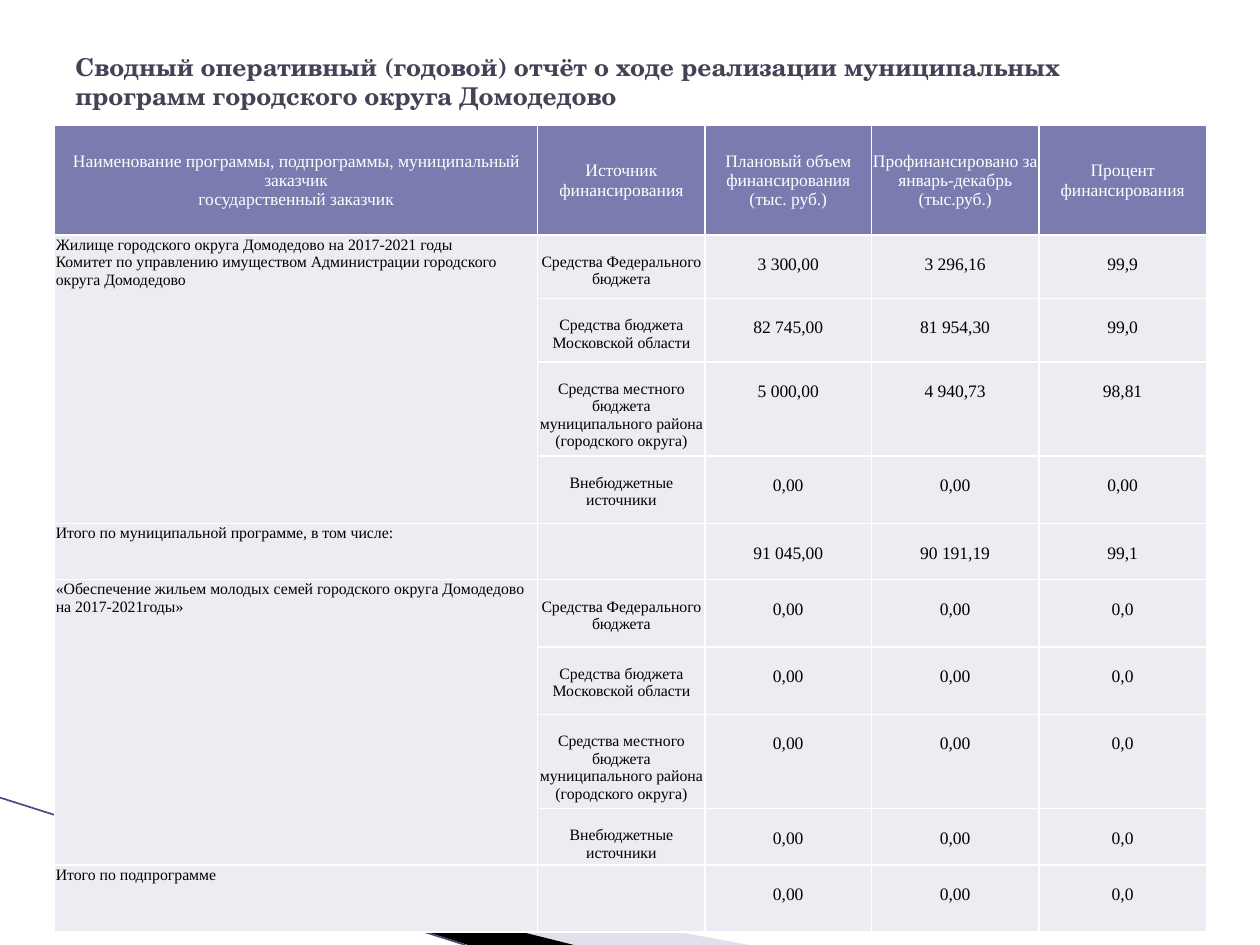
from dataclasses import dataclass

from lxml import etree
from pptx import Presentation, util as u
from pptx.dml.color import RGBColor
from pptx.enum import shapes, text
from pptx.oxml import ns

SERIF = "Times New Roman"
WHITE, BLACK, INK = "FFFFFF", "000000", "424456"
HEADER_FILL, BODY_FILL = "7A7BAE", "ECECF2"


@dataclass
class Wedge:
    points: list[tuple[float, float]]
    color: str
    alpha: int = 100


@dataclass
class CellStyle:
    size: float
    color: str = BLACK
    fill: str = BODY_FILL
    top: float = 0.7
    centered: bool = True
    middle: bool = False


@dataclass
class Program:
    name: str
    amounts: list[tuple[str, str, str]]
    total_name: str
    total: tuple[str, str, str]


HEADER = CellStyle(10, WHITE, HEADER_FILL, middle=True)
NAME = CellStyle(9, centered=False)
SOURCE = CellStyle(9, top=10.5)
AMOUNT = CellStyle(10, top=11.5)

WEDGES = [
    Wedge([(39.6, 468.5), (428, 540), (328.5, 540), (39.6, 468)], "B6B6D1", 40),
    Wedge([(38.2, 467.3), (328, 540), (267.5, 540), (38.9, 468)], BLACK),
]
COLUMNS = [276, 95.75, 95, 95.75, 95.75]
ROWS = [62.6, 36.3, 36.3, 36.3, 38.5, 26.6, 38.5, 38.5, 38.5, 26.6, 38.5]
HEADINGS = [
    "Наименование программы, подпрограммы, муниципальный заказчик\vгосударственный заказчик",
    "Источник финансирования",
    "Плановый объем финансирования (тыс. руб.)",
    "Профинансировано за январь-декабрь (тыс.руб.)",
    "Процент финансирования",
]
SOURCES = [
    "Средства Федерального бюджета",
    "Средства бюджета Московской области",
    "Средства местного бюджета муниципального района (городского округа)",
    "Внебюджетные источники",
]
NOTHING = ("0,00", "0,00", "0,0")
PROGRAMS = [
    Program(
        "Жилище городского округа Домодедово на 2017-2021 годы\v"
        "Комитет по управлению имуществом Администрации городского округа Домодедово",
        [
            ("3 300,00", "3 296,16", "99,9"),
            ("82 745,00", "81 954,30", "99,0"),
            ("5 000,00", "4 940,73", "98,81"),
            ("0,00", "0,00", "0,00"),
        ],
        "Итого по муниципальной программе, в том числе:",
        ("91 045,00", "90 191,19", "99,1"),
    ),
    Program(
        "«Обеспечение жильем молодых семей городского округа Домодедово на 2017-2021годы»",
        [NOTHING] * len(SOURCES),
        "Итого по подпрограмме",
        NOTHING,
    ),
]


def rgb(value: str) -> RGBColor:
    return RGBColor.from_string(value)


def draw_wedge(s, wedge: Wedge) -> None:
    start, *rest = [(u.Pt(x), u.Pt(y)) for x, y in wedge.points]
    builder = s.shapes.build_freeform(*start)
    builder.add_line_segments(rest)
    sp = builder.convert_to_shape()
    sp.shadow.inherit = False
    sp.line.fill.background()
    sp.fill.solid()
    sp.fill.fore_color.rgb = rgb(wedge.color)
    if wedge.alpha < 100:
        color = sp.fill._xPr.find(".//" + ns.qn("a:srgbClr"))
        etree.SubElement(color, ns.qn("a:alpha"), val=str(wedge.alpha * 1000))


def draw_edge(s) -> None:
    line = s.shapes.add_connector(
        shapes.MSO_CONNECTOR.STRAIGHT, u.Pt(0), u.Pt(455.8), u.Pt(266), u.Pt(540)
    )
    line.line.color.rgb = rgb("4B4C7D")
    line.line.width = u.Pt(0.95)
    etree.SubElement(line._element.spPr, ns.qn("a:effectLst"))


def draw_title(s) -> None:
    sp = s.shapes.add_textbox(u.Pt(36), u.Pt(21.6), u.Pt(648), u.Pt(49.7))
    tf = sp.text_frame
    tf.word_wrap = True
    tf.vertical_anchor = text.MSO_ANCHOR.MIDDLE
    tf.text = (
        "Сводный оперативный (годовой) отчёт о ходе реализации "
        "муниципальных программ городского округа Домодедово"
    )
    font = tf.paragraphs[0].runs[0].font
    font.name, font.size, font.bold = "TeX Gyre Schola", u.Pt(14), True
    font.color.rgb = rgb(INK)


def add_borders(cell) -> None:
    tc_pr = cell._tc.get_or_add_tcPr()
    for side in ("lnL", "lnR", "lnT", "lnB"):
        ln = etree.SubElement(tc_pr, ns.qn("a:" + side), w=str(u.Pt(1)))
        fill = etree.SubElement(ln, ns.qn("a:solidFill"))
        etree.SubElement(fill, ns.qn("a:srgbClr"), val=WHITE)


def fill_cell(cell, content: str, style: CellStyle) -> None:
    add_borders(cell)
    cell.fill.solid()
    cell.fill.fore_color.rgb = rgb(style.fill)
    cell.margin_left = cell.margin_right = u.Pt(0.7)
    cell.margin_top, cell.margin_bottom = u.Pt(style.top), u.Pt(0)
    cell.vertical_anchor = text.MSO_ANCHOR.MIDDLE if style.middle else text.MSO_ANCHOR.TOP
    tf = cell.text_frame
    tf.text = content
    p = tf.paragraphs[0]
    p.alignment = text.PP_ALIGN.CENTER if style.centered else text.PP_ALIGN.LEFT
    for r in p.runs:
        r.font.name, r.font.size, r.font.bold = SERIF, u.Pt(style.size), False
        r.font.color.rgb = rgb(style.color)


def table_rows() -> list[list[str]]:
    rows = []
    for program in PROGRAMS:
        names = [program.name] + [""] * (len(SOURCES) - 1)
        for name, source, amounts in zip(names, SOURCES, program.amounts):
            rows.append([name, source, *amounts])
        rows.append([program.total_name, "", *program.total])
    return rows


def draw_table(s) -> None:
    table = s.shapes.add_table(
        len(ROWS), len(COLUMNS), u.Pt(31.2), u.Pt(71.6), u.Pt(sum(COLUMNS)), u.Pt(sum(ROWS))
    ).table
    for column, width in zip(table.columns, COLUMNS):
        column.width = u.Pt(width)
    for row, height in zip(table.rows, ROWS):
        row.height = u.Pt(height)
    for col, heading in enumerate(HEADINGS):
        fill_cell(table.cell(0, col), heading, HEADER)
    styles = [NAME, SOURCE, AMOUNT, AMOUNT, AMOUNT]
    for row, values in enumerate(table_rows(), 1):
        for col, (value, style) in enumerate(zip(values, styles)):
            fill_cell(table.cell(row, col), value, style)
    span = len(SOURCES)
    for first in range(1, len(ROWS), span + 1):
        table.cell(first, 0).merge(table.cell(first + span - 1, 0))


def main() -> None:
    prs = Presentation()
    prs.slide_width, prs.slide_height = u.Pt(720), u.Pt(540)
    s = prs.slides.add_slide(prs.slide_layouts[6])
    for wedge in WEDGES:
        draw_wedge(s, wedge)
    draw_edge(s)
    draw_title(s)
    draw_table(s)
    prs.save("out.pptx")


if __name__ == "__main__":
    main()
